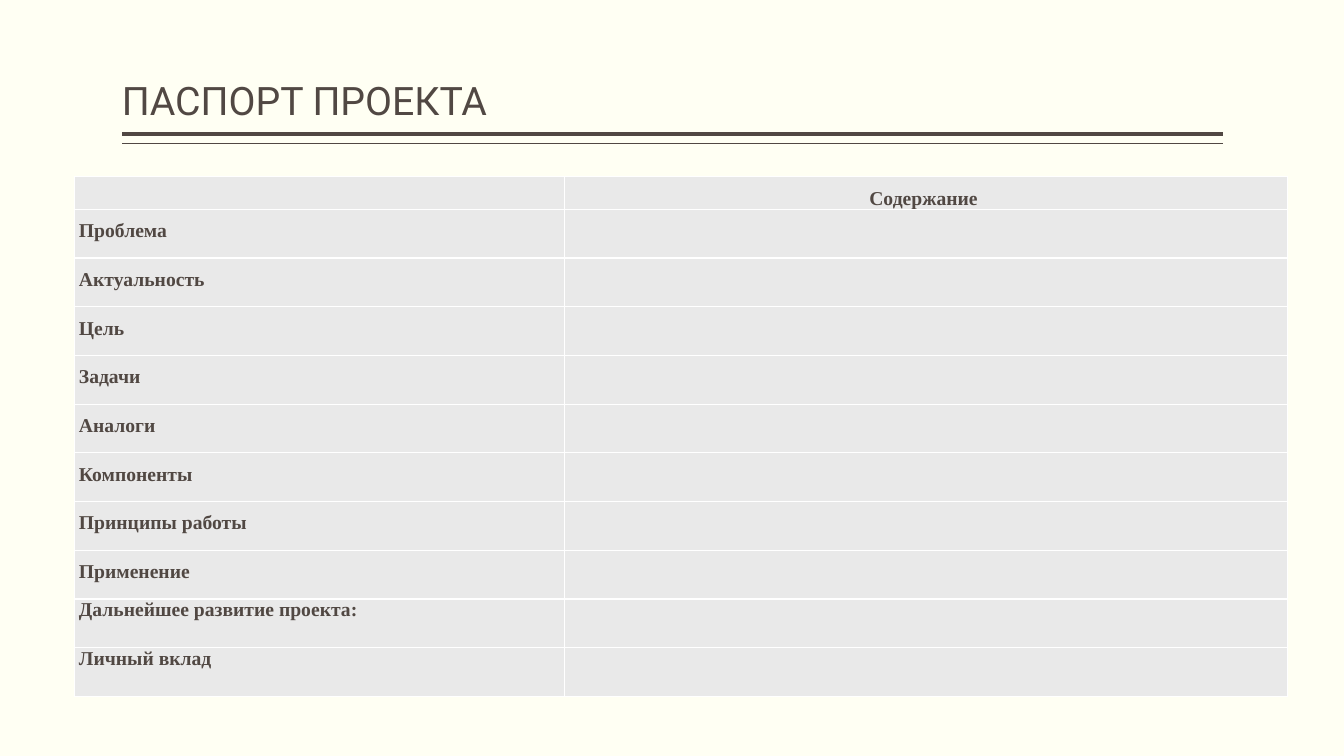
import dataclasses

import pptx
import pptx.dml.color
import pptx.enum.shapes
import pptx.enum.text
import pptx.oxml
import pptx.oxml.ns
import pptx.util

Pt = pptx.util.Pt
ALIGN = pptx.enum.text.PP_ALIGN
ANCHOR = pptx.enum.text.MSO_ANCHOR


@dataclasses.dataclass(frozen=True)
class Theme:
    background: str = "FFFFF3"
    ink: str = "514843"
    cell: str = "E9E9E9"
    border: str = "FFFFFF"
    title_font: str = "Roboto"
    table_font: str = "Times New Roman"
    title_size: int = 28
    table_size: int = 14


THEME = Theme()
LEFT = 87.1
WIDTH = 786.2
HEADER_HEIGHT = 22
ROW_HEIGHT = 34.8
COLUMN_WIDTHS = (349.9, 516.2)
ROWS = (
    ("Проблема", 1.5),
    ("Актуальность", 1.5),
    ("Цель", 1.5),
    ("Задачи", 1.5),
    ("Аналоги", 1.5),
    ("Компоненты", 1.5),
    ("Принципы работы", 1.5),
    ("Применение", 1.5),
    ("Дальнейшее развитие проекта:", 1),
    ("Личный вклад", 1),
)


def rgb(value):
    return pptx.dml.color.RGBColor.from_string(value)


def write_text(text_frame, text, font, size, bold=False, align=ALIGN.LEFT, spacing=1):
    paragraph = text_frame.paragraphs[0]
    paragraph.alignment = align
    paragraph.line_spacing = spacing
    run = paragraph.add_run()
    run.text = text
    run.font.name = font
    run.font.size = Pt(size)
    run.font.bold = bold
    run.font.color.rgb = rgb(THEME.ink)


def add_title(slide, text):
    title = slide.shapes.title
    title.left, title.top = Pt(LEFT), Pt(5.8)
    title.width, title.height = Pt(WIDTH), Pt(86.4)
    frame = title.text_frame
    frame.word_wrap = True
    frame.auto_size = pptx.enum.text.MSO_AUTO_SIZE.NONE
    frame.vertical_anchor = ANCHOR.BOTTOM
    frame.margin_left = frame.margin_right = 0
    frame.margin_top = frame.margin_bottom = Pt(3.6)
    write_text(frame, text, THEME.title_font, THEME.title_size, spacing=0.9)


def add_rule(slide, top, weight):
    rule = slide.shapes.add_connector(
        pptx.enum.shapes.MSO_CONNECTOR.STRAIGHT,
        Pt(LEFT + WIDTH), Pt(top), Pt(LEFT), Pt(top),
    )
    rule.line.color.rgb = rgb(THEME.ink)
    rule.line.width = Pt(weight)
    properties = rule._element.spPr
    properties.append(pptx.oxml.parse_xml(
        f'<a:effectLst {pptx.oxml.ns.nsdecls("a")}/>'
    ))


def format_cell(cell):
    cell.margin_left = cell.margin_right = Pt(2.9)
    cell.margin_top = cell.margin_bottom = 0
    properties = cell._tc.get_or_add_tcPr()
    for side in ("lnL", "lnR", "lnT", "lnB"):
        properties.append(pptx.oxml.parse_xml(
            f'<a:{side} {pptx.oxml.ns.nsdecls("a")} w="{Pt(1)}"><a:solidFill>'
            f'<a:srgbClr val="{THEME.border}"/></a:solidFill></a:{side}>'
        ))
    cell.fill.solid()
    cell.fill.fore_color.rgb = rgb(THEME.cell)


def add_passport_table(slide):
    height = HEADER_HEIGHT + ROW_HEIGHT * len(ROWS)
    table = slide.shapes.add_table(
        len(ROWS) + 1, len(COLUMN_WIDTHS),
        Pt(53.5), Pt(126.3), Pt(sum(COLUMN_WIDTHS)), Pt(height),
    ).table
    table.first_row = table.horz_banding = False
    for column, width in zip(table.columns, COLUMN_WIDTHS):
        column.width = Pt(width)
    contents = [("", "Содержание ", ALIGN.CENTER, 1.5)]
    contents += [(label, "", ALIGN.LEFT, spacing) for label, spacing in ROWS]
    for index, (label, content, align, spacing) in enumerate(contents):
        table.rows[index].height = Pt(ROW_HEIGHT if index else HEADER_HEIGHT)
        for column, text in enumerate((label, content)):
            cell = table.cell(index, column)
            format_cell(cell)
            write_text(
                cell.text_frame, text, THEME.table_font, THEME.table_size,
                bold=True, align=align, spacing=spacing if text else 1,
            )


def main():
    presentation = pptx.Presentation()
    presentation.slide_width, presentation.slide_height = Pt(960), Pt(540)
    slide = presentation.slides.add_slide(presentation.slide_layouts[5])
    slide.background.fill.solid()
    slide.background.fill.fore_color.rgb = rgb(THEME.background)
    add_rule(slide, 95.8, 3)
    add_rule(slide, 102.6, 1)
    add_title(slide, "ПАСПОРТ ПРОЕКТА")
    add_passport_table(slide)
    presentation.save("out.pptx")


if __name__ == "__main__":
    main()
